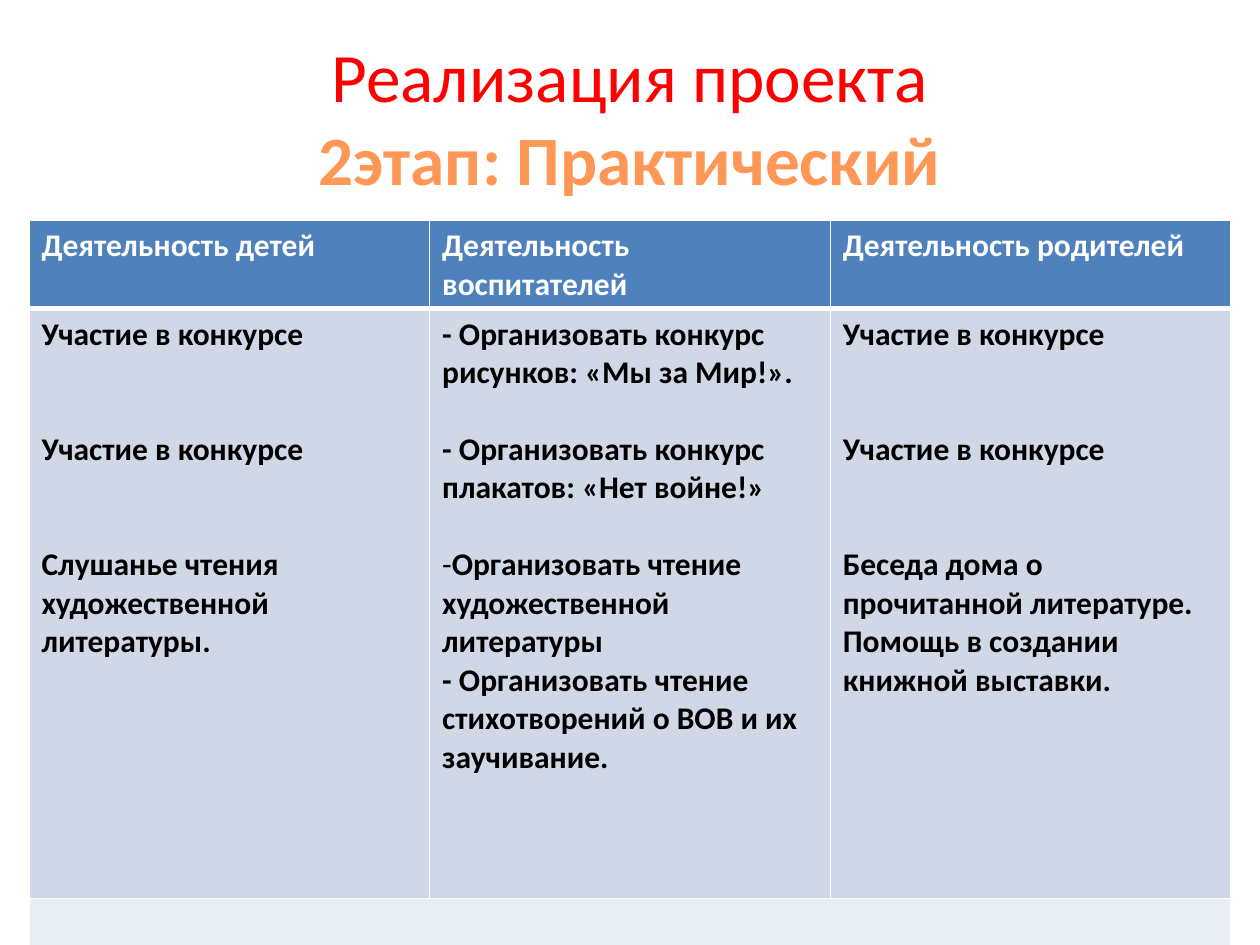
from lxml.etree import SubElement
from pptx import Presentation
from pptx.dml.color import RGBColor
from pptx.enum.text import MSO_ANCHOR, PP_ALIGN
from pptx.oxml.ns import qn
from pptx.util import Inches, Pt

WHITE = RGBColor(0xFF, 0xFF, 0xFF)
BLACK = RGBColor(0x00, 0x00, 0x00)
RED = RGBColor(0xFF, 0x00, 0x00)
ORANGE = RGBColor(0xFF, 0x98, 0x56)
HEADER_BLUE = RGBColor(0x4F, 0x81, 0xBD)
BODY_BLUE = RGBColor(0xD0, 0xD8, 0xE8)
FOOTER_BLUE = RGBColor(0xE9, 0xED, 0xF4)

LINE = 22  # height of one 18 pt line, in points
HEADERS = ["Деятельность детей", "Деятельность воспитателей", "Деятельность родителей"]

# Each column holds (text, lines of space before, bullet)
CONTEST = "Участие в конкурсе"
COLUMNS = [
    [
        (CONTEST, 0, None),
        (CONTEST, 2, None),
        ("Слушанье чтения художественной литературы.", 2, None),
    ],
    [
        ("- Организовать конкурс рисунков: «Мы за Мир!».", 0, None),
        ("- Организовать конкурс плакатов: «Нет войне!»", 1, None),
        ("Организовать чтение художественной литературы", 1, "-"),
        ("- Организовать чтение стихотворений о ВОВ и их заучивание.", 0, None),
    ],
    [
        (CONTEST, 0, None),
        (CONTEST, 2, None),
        ("Беседа дома о прочитанной литературе.", 2, None),
        ("Помощь в создании книжной выставки.", 0, None),
    ],
]


def add_text(paragraph, text, size=18, color=BLACK, bold=True, align=PP_ALIGN.LEFT,
             space_before=0, bullet=None):
    if bullet:
        properties = paragraph._p.get_or_add_pPr()
        properties.set("marL", "0")
        properties.set("indent", "0")
        SubElement(properties, qn("a:buFont")).set("typeface", "Calibri")
        SubElement(properties, qn("a:buChar")).set("char", bullet)
    paragraph.alignment = align
    if space_before:
        paragraph.space_before = Pt(space_before)
    run = paragraph.add_run()
    run.text = text
    run.font.name = "Calibri"
    run.font.size = Pt(size)
    run.font.bold = bold
    run.font.color.rgb = color


def style_cell(cell, fill, bottom=1):
    # Borders come before the fill in the cell properties
    properties = cell._tc.get_or_add_tcPr()
    for side, width in (("L", 1), ("R", 1), ("T", 1), ("B", bottom)):
        border = SubElement(properties, qn(f"a:ln{side}"), w=str(Pt(width)))
        solid = SubElement(border, qn("a:solidFill"))
        SubElement(solid, qn("a:srgbClr"), val=str(WHITE))
    cell.fill.solid()
    cell.fill.fore_color.rgb = fill


def add_title(slide):
    box = slide.shapes.add_textbox(Inches(0.5), Inches(0.3), Inches(9), Inches(1.25))
    frame = box.text_frame
    frame.word_wrap = True
    frame.vertical_anchor = MSO_ANCHOR.MIDDLE
    paragraph = frame.paragraphs[0]
    add_text(paragraph, "Реализация проекта", size=39.6, color=RED, bold=False,
             align=PP_ALIGN.CENTER)
    paragraph.add_line_break()
    add_text(paragraph, "2этап: Практический", size=39.6, color=ORANGE,
             align=PP_ALIGN.CENTER)


def add_activity_table(slide):
    table = slide.shapes.add_table(3, 3, Inches(0.23), Inches(1.75),
                                   Inches(9.53), Inches(5.7)).table
    for column in table.columns:
        column.width = Inches(3.18)
    for row, height in zip(table.rows, (0.7, 4.68, 0.34)):
        row.height = Inches(height)

    for index, (header, items) in enumerate(zip(HEADERS, COLUMNS)):
        # Header row
        cell = table.cell(0, index)
        style_cell(cell, HEADER_BLUE, bottom=3)
        add_text(cell.text_frame.paragraphs[0], header, color=WHITE)

        # Activities
        cell = table.cell(1, index)
        style_cell(cell, BODY_BLUE)
        frame = cell.text_frame
        for position, (text, gap, bullet) in enumerate(items):
            paragraph = frame.add_paragraph() if position else frame.paragraphs[0]
            add_text(paragraph, text, space_before=gap * LINE, bullet=bullet)

    # Empty closing row
    table.cell(2, 0).merge(table.cell(2, 2))
    style_cell(table.cell(2, 0), FOOTER_BLUE)


def main():
    presentation = Presentation()
    presentation.slide_width = Inches(10)
    presentation.slide_height = Inches(7.5)
    slide = presentation.slides.add_slide(presentation.slide_layouts[6])
    add_title(slide)
    add_activity_table(slide)
    presentation.save("out.pptx")


if __name__ == "__main__":
    main()
